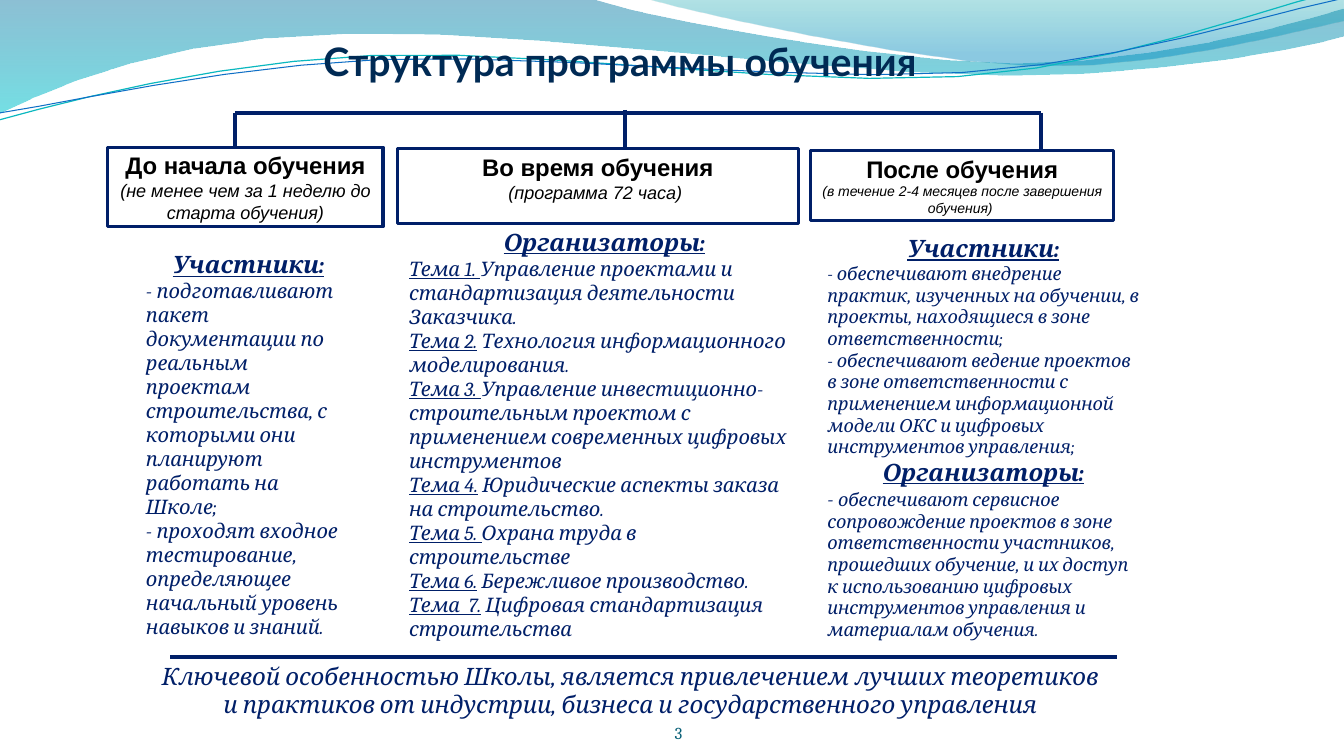
import pptx
import pptx.util
import pptx.dml.color
import pptx.enum.text
import pptx.enum.shapes
import pptx.oxml
import pptx.oxml.ns
from lxml import etree

CELL = pptx.util.Inches(0.1)
HEX = {"navy": "001F68", "title": "002A54", "page": "045D75", "ink": "000000",
       "white": "FFFFFF", "steel": "0074A1", "aqua": "00C6CF",
       "teal": "00A1A9", "sky": "008BBF", "cyan": "0AB8BF", "blue": "0F6FC6"}
ALIGN = {"l": pptx.enum.text.PP_ALIGN.LEFT, "c": pptx.enum.text.PP_ALIGN.CENTER,
         "r": pptx.enum.text.PP_ALIGN.RIGHT}
ANCHOR = {"m": pptx.enum.text.MSO_ANCHOR.MIDDLE, "b": pptx.enum.text.MSO_ANCHOR.BOTTOM}
HEAD = {"size": 17.1, "bold": True, "under": True}


def grid(*cells):
    return [round(cell * CELL) for cell in cells]


def shift(box, dx, dy, wide, high):
    return box[0] + dx, box[1] + dy, wide, high


def color(name):
    return pptx.dml.color.RGBColor.from_string(HEX[name])


def write(shape, paras, anchor="m", inset=(1, 0.5, 1, 0.5), **base):
    frame = shape.text_frame
    frame.word_wrap = True
    frame.auto_size = pptx.enum.text.MSO_AUTO_SIZE.NONE
    frame.vertical_anchor = ANCHOR[anchor]
    (frame.margin_left, frame.margin_top,
     frame.margin_right, frame.margin_bottom) = grid(*inset)
    for i, (align, *runs) in enumerate(paras):
        para = frame.paragraphs[0] if i == 0 else frame.add_paragraph()
        para.alignment = ALIGN[align]
        for words, form in runs:
            form = {**base, **form}
            run = para.add_run()
            run.text = words
            run.font.name = form["font"]
            run.font.size = pptx.util.Centipoints(round(form["size"] * 100))
            run.font.color.rgb = color(form["ink"])
            run.font.bold = form.get("bold", False)
            run.font.italic = form.get("slant", False)
            run.font.underline = form.get("under", False)


def label(slide, box, paras, **form):
    write(slide.shapes.add_textbox(*grid(*box)), paras, **form)


def rule(slide, start, end):
    line = slide.shapes.add_connector(
        pptx.enum.shapes.MSO_CONNECTOR.STRAIGHT, *grid(*start, *end))
    line.line.color.rgb = color("navy")
    line.line.width = pptx.util.Pt(3)
    etree.SubElement(line._element.spPr, pptx.oxml.ns.qn("a:effectLst"))


def trace(start, parts, steps=6):
    dots = [start]
    for part in parts:
        if len(part) == 2:
            dots.append(part)
            continue
        last = dots[-1]
        for step in range(1, steps + 1):
            t = step / steps
            s = 1 - t
            dots.append([s ** 3 * last[k] + 3 * s * s * t * part[k]
                         + 3 * s * t * t * part[k + 2] + t ** 3 * part[k + 4]
                         for k in (0, 1)])
    return dots


def wave(slide, box, start, parts, stops=None, line=None):
    dots = [grid(box[0] + x, box[1] + y) for x, y in trace(start, parts)]
    build = slide.shapes.build_freeform(*dots[0], scale=1.0)
    build.add_line_segments(dots[1:], close=bool(stops))
    shape = build.convert_to_shape()
    shape.shadow.inherit = False
    if line:
        shape.fill.background()
        shape.line.color.rgb = color(line[0])
        shape.line.width = pptx.util.Pt(line[1])
        return
    shape.line.fill.background()
    shape.fill.gradient()
    shape.fill.gradient_angle = 270
    for stop, (place, name, alpha) in zip(shape.fill.gradient_stops, stops):
        stop.position = place
        stop.color.rgb = color(name)
        tint = stop._gs.find(pptx.oxml.ns.qn("a:srgbClr"))
        etree.SubElement(tint, pptx.oxml.ns.qn("a:alpha"), val=str(alpha * 1000))


def header(slide, box):
    wave(slide, box, (0, 0), [
        (58.7, -0.1), (63.4, 1.7, 88.5, 6.3, 101.1, 6.3),
        (113.8, 6.3, 127.8, 2.6, 133.3, 0.9), (133.5, 3.6),
        (131.1, 4.4, 116, 7.6, 99.4, 7.5), (82.9, 7.5, 50.9, 2.8, 34.3, 3.4),
        (17.2, 3.6, 6.1, 8.3, -0.1, 11.3)],
        stops=[(0, "steel", 45), (1, "aqua", 55)])
    wave(slide, box, (63.9, -0.1), [
        (67.9, 1.1, 90.9, 6.2, 102.5, 6.5),
        (114.1, 6.9, 128.2, 3.2, 133.3, 2.1), (133.3, 0)],
        stops=[(0, "teal", 30), (0.8, "sky", 45)])
    wave(slide, box, (-0.1, 11.9), [
        (6.4, 10.1, 21.1, 6.2, 36.9, 5.5), (52.7, 4.8, 79, 8.7, 95, 7.6),
        (111, 6.6, 125.2, 0.8, 133.1, -1)], line=("cyan", 0.85))
    wave(slide, box, (0, 11.2), [
        (6.3, 10.3, 21.8, 6.6, 37.8, 5.9), (53.7, 5.3, 79.6, 8.2, 95.5, 7.2),
        (111.5, 6.2, 125.5, 1.4, 133.4, -0.2)], line=("blue", 0.75))
    label(slide, shift(box, 1.9, 1.4, 119.2, 8.8),
          [("c", ("Структура программы обучения", {}))], inset=(0, 0.5, 0, 0),
          font="Lato", size=28, ink="title", bold=True)


def tree(slide, box):
    x, y, wide, high = box
    rule(slide, (x, y), (x + wide, y))
    for dx, rise, drop in ((0, 0, high), (38.7, 0.3, high), (wide, 0, high + 0.9)):
        rule(slide, (x + dx, y - rise), (x + dx, y + drop))


def stage(slide, box, head, body, place, fill="white", base=0.4, foot=0.5, size=14.3):
    card = slide.shapes.add_shape(pptx.enum.shapes.MSO_SHAPE.RECTANGLE, *grid(*box))
    card.shadow.inherit = False
    if fill:
        card.fill.solid()
        card.fill.fore_color.rgb = color(fill)
    else:
        card.fill.background()
    card.line.color.rgb = color("navy")
    card.line.width = pptx.util.Pt(2.25)
    write(card, head, inset=(0.4, 0.4, 0.4, base), font="Arial", size=17.1, ink="ink")
    label(slide, shift(box, *place), body, inset=(1, 0.5, 1, foot),
          font="Cambria", size=size, ink="navy", slant=True)


def footer(slide, box):
    x, y, wide, high = box
    label(slide, shift(box, 46.9, 4.9, 6.3, 3.6), [("r", ("3", {}))], anchor="b",
          inset=(0, 0, 0, 0), font="Cambria", size=12, ink="page")
    label(slide, shift(box, 0, 0.3, wide, 5.9), [("c", (
        "Ключевой особенностью Школы, является привлечением лучших теоретиков "
        "и практиков от индустрии, бизнеса и государственного управления", {}))],
        font="Cambria", size=17.1, ink="navy", slant=True)
    rule(slide, (x + 2.4, y), (x + wide + 0.2, y))


def main():
    deck = pptx.Presentation()
    deck.slide_width, deck.slide_height = grid(133.33, 75)
    slide = deck.slides.add_slide(deck.slide_layouts[6])
    bold = {"bold": True}
    note = {"size": 12.9, "slant": True}
    users = ("c", ("Участники:", HEAD))
    hosts = ("c", ("Организаторы:", HEAD))
    themes = [
        ("Тема 1. ", "Управление проектами и стандартизация деятельности Заказчика."),
        ("Тема 2.", " Технология информационного моделирования."),
        ("Тема 3. ", "Управление инвестиционно-строительным проектом с применением "
                     "современных цифровых инструментов"),
        ("Тема 4.", " Юридические аспекты заказа на строительство."),
        ("Тема 5. ", "Охрана труда в строительстве"),
        ("Тема 6.", " Бережливое производство."),
        ("Тема  7.", " Цифровая стандартизация строительства")]

    header(slide, (0, 0, 133.33, 11.3))
    tree(slide, (23.3, 11.2, 80, 3.6))
    stage(slide, (10.7, 14.6, 27.3, 7.9),
          [("c", ("До начала обучения ", bold),
            ("(не менее чем за 1 неделю до старта обучения)", note))],
          [users,
           ("l", ("- подготавливают пакет документации по реальным проектам "
                  "строительства, с которыми они планируют работать на Школе;", {})),
           ("l", ("- проходят входное тестирование, определяющее начальный "
                  "уровень навыков и знаний.", {}))],
          (2.8, 12.9, 22.3, 35.4), fill=None, foot=2.7)
    stage(slide, (39.4, 14.7, 39.8, 7.5),
          [("c", ("Во время обучения", bold)), ("c", ("(программа 72 часа) ", note))],
          [hosts] + [("l", (name, {"under": True}), (words, {})) for name, words in themes],
          (0.2, 11, 40.7, 34.7), base=2)
    stage(slide, (80.4, 14.9, 30.1, 7),
          [("c", ("После обучения", bold)),
           ("c", ("(в течение 2-4 месяцев после завершения обучения) ",
                  {**note, "size": 10}))],
          [users,
           ("l", ("- обеспечивают внедрение практик, изученных на обучении, в проекты, "
                  "находящиеся в зоне ответственности;", {})),
           ("l", ("- обеспечивают ведение проектов в зоне ответственности с применением "
                  "информационной модели ОКС и цифровых инструментов управления;", {})),
           hosts,
           ("l", ("- ", {"size": 14.3}),
            ("обеспечивают сервисное сопровождение проектов в зоне ответственности "
             "участников, прошедших обучение, и их доступ к использованию цифровых "
             "инструментов управления и материалам обучения.", {}))],
          (0.7, 8.8, 32.9, 39.3), size=12.9)
    footer(slide, (14.5, 65.2, 96.1, 9))
    deck.save("out.pptx")


if __name__ == "__main__":
    main()
